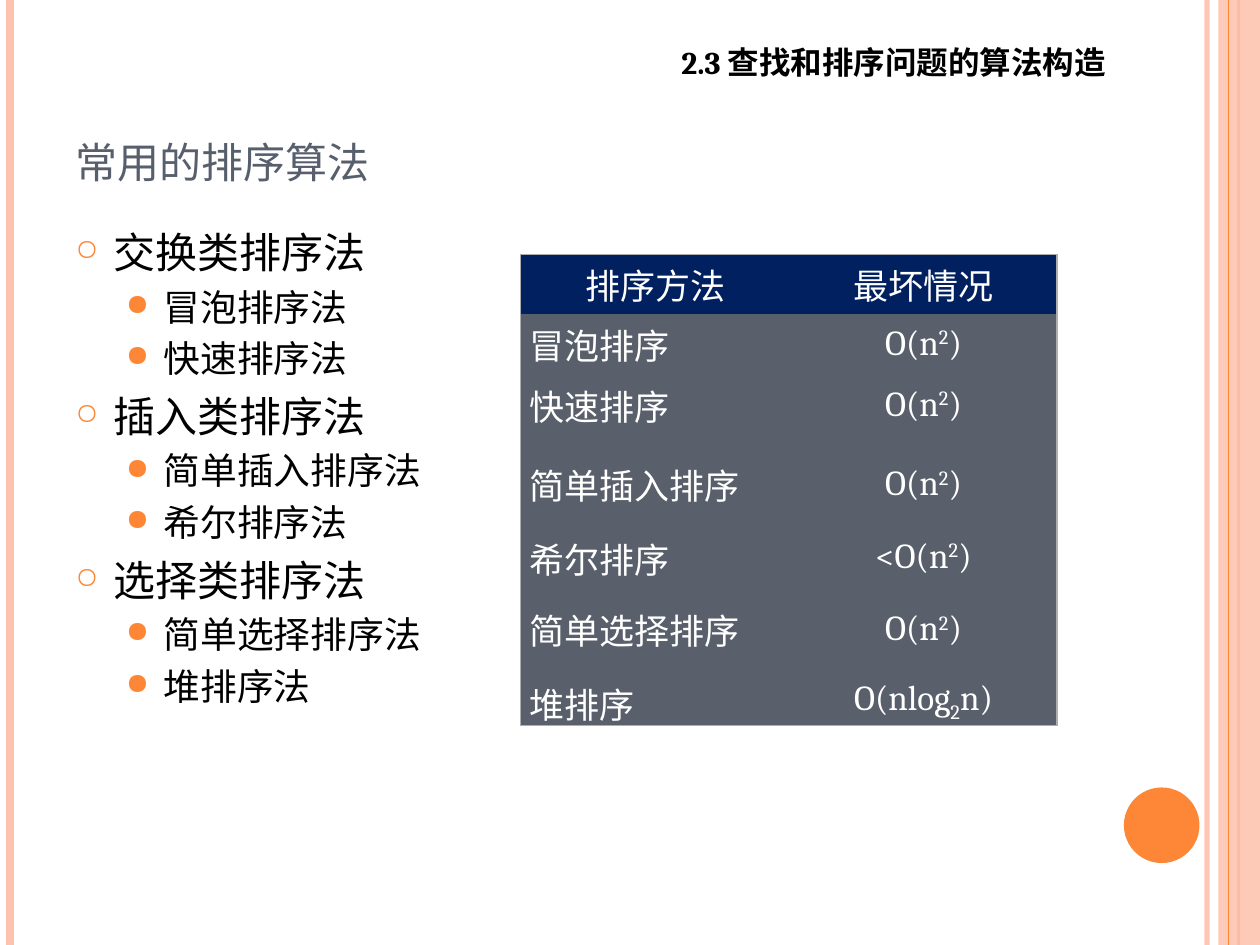
from lxml import etree
from pptx import Presentation
from pptx.dml.color import RGBColor
from pptx.enum.shapes import MSO_CONNECTOR, MSO_SHAPE
from pptx.enum.text import MSO_ANCHOR, PP_ALIGN
from pptx.oxml.ns import qn
from pptx.util import Inches, Pt

STRAIGHT = MSO_CONNECTOR.STRAIGHT
RECTANGLE, OVAL = MSO_SHAPE.RECTANGLE, MSO_SHAPE.OVAL
BOTTOM, MIDDLE = MSO_ANCHOR.BOTTOM, MSO_ANCHOR.MIDDLE
LEFT, CENTER, JUSTIFY = PP_ALIGN.LEFT, PP_ALIGN.CENTER, PP_ALIGN.JUSTIFY

LATIN, CHINESE = "Cambria", "Noto Sans CJK SC"
ORANGE, PEACH, SLATE = "FE8637", "FEC3AE", "575F6D"
BLACK, WHITE, NAVY, BORDER = "000000", "FFFFFF", "002060", "ACAFB1"
TABLE_FILL = "5A606B"
NO_GRID_STYLE = "{2D5ABB26-0587-4C30-8999-92F81FD0307C}"

# x, width in points, colour, opacity in percent
STRIPES_BEHIND = [(9.58, 3, PEACH, 93), (0.08, 4.5, PEACH, 100), (9.83, 1.5, ORANGE, 100)]
STRIPE_IN_FRONT = (9.75, 0.75, ORANGE, 100)

# bullet, size, indent, space before, bullet size in percent
LEVELS = [("○", 24, 0.3, 6, 70), ("●", 21, 0.7, 4.2, 80)]
SORT_FAMILIES = {
    "交换类排序法": ["冒泡排序法", "快速排序法"],
    "插入类排序法": ["简单插入排序法", "希尔排序法"],
    "选择类排序法": ["简单选择排序法", "堆排序法"],
}

HEADERS = ["排序方法", "最坏情况"]
SQUARE = ("2", 30000)
WORST_CASES = [
    ("冒泡排序", ["O(n", SQUARE, ")"]),
    ("快速排序", ["O(n", SQUARE, ")"]),
    ("简单插入排序", ["O(n", SQUARE, ")"]),
    ("希尔排序", ["<O(n", SQUARE, ")"]),
    ("简单选择排序", ["O(n", SQUARE, ")"]),
    ("堆排序", ["O(nlog", ("2", -25000), "n)"]),
]
COLUMN_WIDTHS = [2.14, 2.12]
ROW_HEIGHTS = [0.47, 0.48, 0.49, 0.77, 0.38, 0.77, 0.38]


def color(hex_string):
    return RGBColor.from_string(hex_string)


def add_xml(parent, tag, **attributes):
    return etree.SubElement(parent, qn(tag), attributes)


def set_opacity(fill_owner, percent):
    rgb = next(fill_owner.iter(qn("a:srgbClr")))
    add_xml(rgb, "a:alpha", val=str(percent * 1000))


def format_paragraph(paragraph, size, hex_string, latin=CHINESE, bold=False):
    font = paragraph.font
    font.name, font.size, font.bold = latin, Pt(size), bold
    font.color.rgb = color(hex_string)
    add_xml(font._element, "a:ea", typeface=CHINESE)


def add_stripe(slide, x, width, hex_string, opacity):
    line = slide.shapes.add_connector(STRAIGHT, Inches(x), 0, Inches(x), Inches(7.5))
    line.line.width = Pt(width)
    line.line.color.rgb = color(hex_string)
    set_opacity(line.line._ln, opacity)
    add_xml(line._element.spPr, "a:effectLst")


def add_plain_shape(slide, kind, left, top, width, height, hex_string):
    shape = slide.shapes.add_shape(
        kind, Inches(left), Inches(top), Inches(width), Inches(height))
    shape.shadow.inherit = False
    shape.fill.solid()
    shape.fill.fore_color.rgb = color(hex_string)
    shape.line.fill.background()
    return shape


def add_decoration(slide):
    for stripe in STRIPES_BEHIND:
        add_stripe(slide, *stripe)
    band = add_plain_shape(slide, RECTANGLE, 9.67, 0, 0.33, 7.5, PEACH)
    set_opacity(band._element.spPr, 87)
    add_stripe(slide, *STRIPE_IN_FRONT)
    add_plain_shape(slide, OVAL, 8.92, 6.25, 0.6, 0.6, ORANGE)


def set_title(slide, text):
    title = slide.shapes.title
    title.left, title.top = Inches(0.5), Inches(0.3)
    title.width, title.height = Inches(8.17), Inches(1.25)
    title.text_frame.text = text
    title.text_frame.vertical_anchor = BOTTOM
    paragraph = title.text_frame.paragraphs[0]
    paragraph.alignment = LEFT
    format_paragraph(paragraph, 30, SLATE)
    paragraph.font._element.set("cap", "small")


def add_text_box(slide, left, top, width, height):
    box = slide.shapes.add_textbox(Inches(left), Inches(top), Inches(width), Inches(height))
    box.text_frame.word_wrap = True
    return box.text_frame


def format_bullet(paragraph, level):
    character, size, indent, space_before, bullet_percent = LEVELS[level]
    paragraph.level = level
    properties = paragraph._p.get_or_add_pPr()
    properties.set("marL", str(Inches(indent)))
    properties.set("indent", str(Inches(-0.3)))
    add_xml(add_xml(properties, "a:buClr"), "a:srgbClr", val=ORANGE)
    add_xml(properties, "a:buSzPct", val=str(bullet_percent * 1000))
    add_xml(properties, "a:buChar", char=character)
    paragraph.space_before = Pt(space_before)
    format_paragraph(paragraph, size, BLACK)


def add_outline(slide):
    frame = add_text_box(slide, 0.5, 1.75, 8.17, 5.33)
    entries = []
    for family, methods in SORT_FAMILIES.items():
        entries += [(family, 0)] + [(method, 1) for method in methods]
    for index, (text, level) in enumerate(entries):
        paragraph = frame.add_paragraph() if index else frame.paragraphs[0]
        paragraph.text = text
        format_bullet(paragraph, level)


def add_section_label(slide, text):
    frame = add_text_box(slide, 5.31, 0.29, 4.17, 0.4)
    frame.text = text
    format_paragraph(frame.paragraphs[0], 18, BLACK, LATIN, bold=True)


def fill_cell(cell, pieces, alignment, fill):
    """Write pieces, each plain text or a (text, baseline) pair, into the cell."""
    cell.margin_left = cell.margin_right = Inches(0.07)
    cell.margin_top = cell.margin_bottom = 0
    cell.vertical_anchor = MIDDLE
    paragraph = cell.text_frame.paragraphs[0]
    paragraph.alignment = alignment
    format_paragraph(paragraph, 20, WHITE, LATIN)
    for piece in pieces:
        text, baseline = (piece, 0) if isinstance(piece, str) else piece
        run = paragraph.add_run()
        run.text = text
        if baseline:
            run.font._element.set("baseline", str(baseline))
    cell.fill.solid()
    cell.fill.fore_color.rgb = color(fill)


def add_outer_borders(cell, row, column):
    sides = {
        "a:lnL": column == 0,
        "a:lnR": column == len(COLUMN_WIDTHS) - 1,
        "a:lnT": row == 0,
        "a:lnB": row == len(ROW_HEIGHTS) - 1,
    }
    properties = cell._tc.get_or_add_tcPr()
    outer_sides = [tag for tag, is_outer in sides.items() if is_outer]
    for position, tag in enumerate(outer_sides):
        line = add_xml(properties, tag, w=str(Pt(1)))
        add_xml(add_xml(line, "a:solidFill"), "a:srgbClr", val=BORDER)
        properties.insert(position, line)


def add_complexity_table(slide):
    table = slide.shapes.add_table(
        len(ROW_HEIGHTS), len(COLUMN_WIDTHS), Inches(4.13), Inches(2.02),
        Inches(sum(COLUMN_WIDTHS)), Inches(sum(ROW_HEIGHTS))).table
    table._tbl.tblPr.find(qn("a:tableStyleId")).text = NO_GRID_STYLE
    for column, width in zip(table.columns, COLUMN_WIDTHS):
        column.width = Inches(width)
    for row, height in zip(table.rows, ROW_HEIGHTS):
        row.height = Inches(height)
    for column, header in enumerate(HEADERS):
        fill_cell(table.cell(0, column), [header], CENTER, NAVY)
    for row, (method, worst_case) in enumerate(WORST_CASES, start=1):
        fill_cell(table.cell(row, 0), [method], JUSTIFY, TABLE_FILL)
        fill_cell(table.cell(row, 1), worst_case, CENTER, TABLE_FILL)
    for row in range(len(ROW_HEIGHTS)):
        for column in range(len(COLUMN_WIDTHS)):
            add_outer_borders(table.cell(row, column), row, column)


def main():
    presentation = Presentation()
    presentation.slide_width, presentation.slide_height = Inches(10), Inches(7.5)
    slide = presentation.slides.add_slide(presentation.slide_layouts[5])
    add_decoration(slide)
    set_title(slide, "常用的排序算法")
    add_outline(slide)
    add_section_label(slide, "2.3 查找和排序问题的算法构造")
    add_complexity_table(slide)
    presentation.save("out.pptx")


if __name__ == "__main__":
    main()
